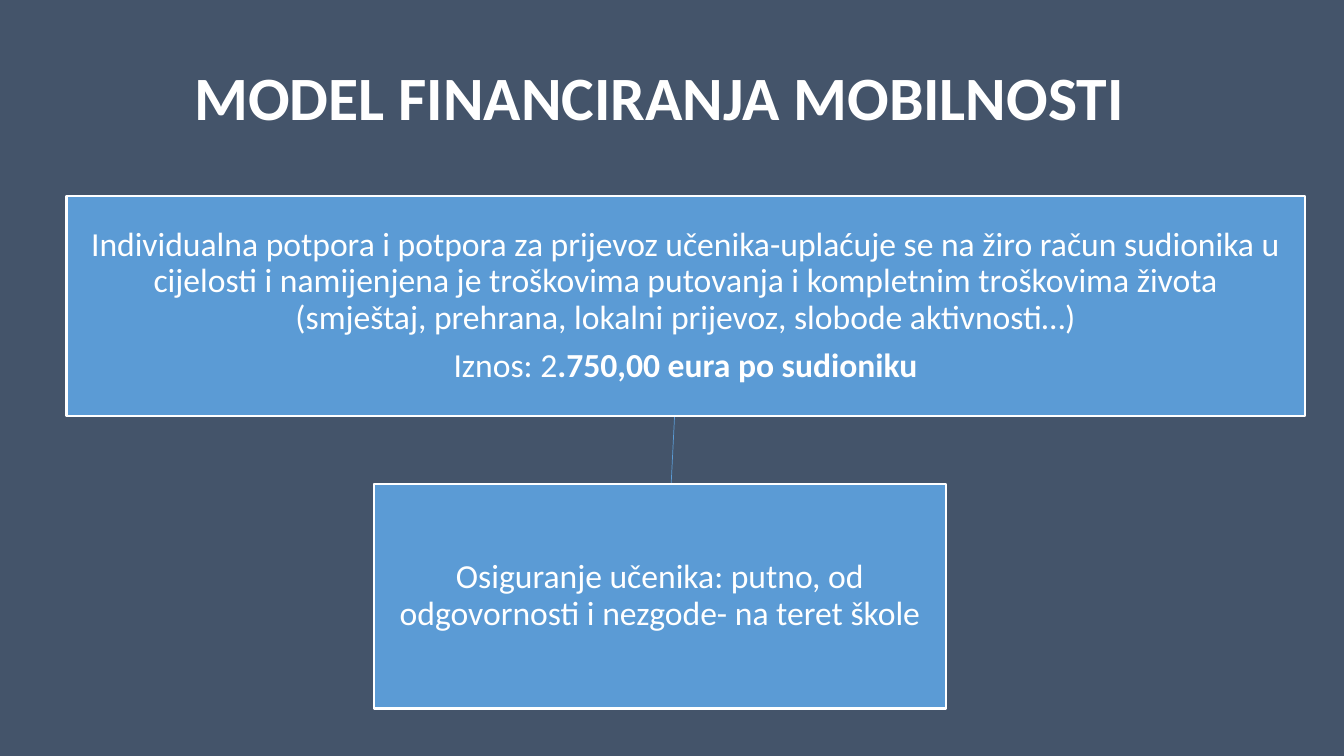
from lxml import etree
from pptx import Presentation
from pptx.dml.color import RGBColor
from pptx.enum.shapes import MSO_CONNECTOR, MSO_SHAPE
from pptx.enum.text import MSO_ANCHOR, PP_ALIGN
from pptx.oxml.ns import qn
from pptx.util import Inches, Pt

STRAIGHT = MSO_CONNECTOR.STRAIGHT
RECTANGLE = MSO_SHAPE.RECTANGLE
MIDDLE = MSO_ANCHOR.MIDDLE
LEFT, CENTER = PP_ALIGN.LEFT, PP_ALIGN.CENTER
TOP_SIDE, BOTTOM_SIDE = 0, 2

SLATE = RGBColor(0x44, 0x54, 0x6A)
BLUE = RGBColor(0x5B, 0x9B, 0xD5)
WHITE = RGBColor(0xFF, 0xFF, 0xFF)
FONT = "Calibri"

TITLE_AREA = (1.83, 0.27, 11.5, 1.45)
TITLE = [[("MODEL FINANCIRANJA MOBILNOSTI", True)]]

INSURANCE_AREA = (3.71, 4.8, 5.67, 2.23)
INSURANCE = [[("Osiguranje učenika: putno, od odgovornosti i nezgode- na teret škole", False)]]

SUPPORT_AREA = (0.66, 1.94, 12.28, 2.19)
SUPPORT = [
    [("Individualna potpora i potpora za prijevoz učenika-uplaćuje se na žiro račun "
      "sudionika u cijelosti i namijenjena je troškovima putovanja i kompletnim "
      "troškovima života (smještaj, prehrana, lokalni prijevoz, slobode aktivnosti…)", False)],
    [("Iznos: 2", False), (".750,00 eura po sudioniku", True)],
]


def write_text(shape, paragraphs, size, alignment, space_after):
    text_frame = shape.text_frame
    text_frame.word_wrap = True
    text_frame.vertical_anchor = MIDDLE
    for index, runs in enumerate(paragraphs):
        paragraph = text_frame.add_paragraph() if index else text_frame.paragraphs[0]
        paragraph.alignment = alignment
        paragraph.line_spacing = 0.9
        paragraph.space_after = Pt(space_after)
        for text, bold in runs:
            run = paragraph.add_run()
            run.text = text
            run.font.name = FONT
            run.font.size = Pt(size)
            run.font.bold = bold
            run.font.color.rgb = WHITE


def add_box(slide, area, paragraphs):
    box = slide.shapes.add_shape(RECTANGLE, *map(Inches, area))
    box.shadow.inherit = False
    box.fill.solid()
    box.fill.fore_color.rgb = BLUE
    box.line.color.rgb = WHITE
    box.line.width = Pt(1.5)
    text_frame = box.text_frame
    text_frame.margin_left = text_frame.margin_right = Inches(0.23)
    text_frame.margin_top = text_frame.margin_bottom = Inches(0.24)
    write_text(box, paragraphs, 24, CENTER, 8.4)
    return box


def add_arrow(slide):
    arrow = slide.shapes.add_connector(STRAIGHT, 0, 0, 0, 0)
    arrow.line.color.rgb = BLUE
    arrow.line.width = Pt(0.5)
    properties = arrow.element.spPr
    etree.SubElement(properties.find(qn("a:ln")), qn("a:tailEnd"), type="arrow")
    etree.SubElement(properties, qn("a:effectLst"))
    return arrow


def main():
    presentation = Presentation()
    presentation.slide_width = Inches(13.33)
    presentation.slide_height = Inches(7.5)
    slide = presentation.slides.add_slide(presentation.slide_layouts[6])
    slide.background.fill.solid()
    slide.background.fill.fore_color.rgb = SLATE

    title = slide.shapes.add_textbox(*map(Inches, TITLE_AREA))
    write_text(title, TITLE, 44, LEFT, 0)

    arrow = add_arrow(slide)
    insurance = add_box(slide, INSURANCE_AREA, INSURANCE)
    support = add_box(slide, SUPPORT_AREA, SUPPORT)
    arrow.begin_connect(insurance, BOTTOM_SIDE)
    arrow.end_connect(support, TOP_SIDE)

    presentation.save("out.pptx")


if __name__ == "__main__":
    main()
